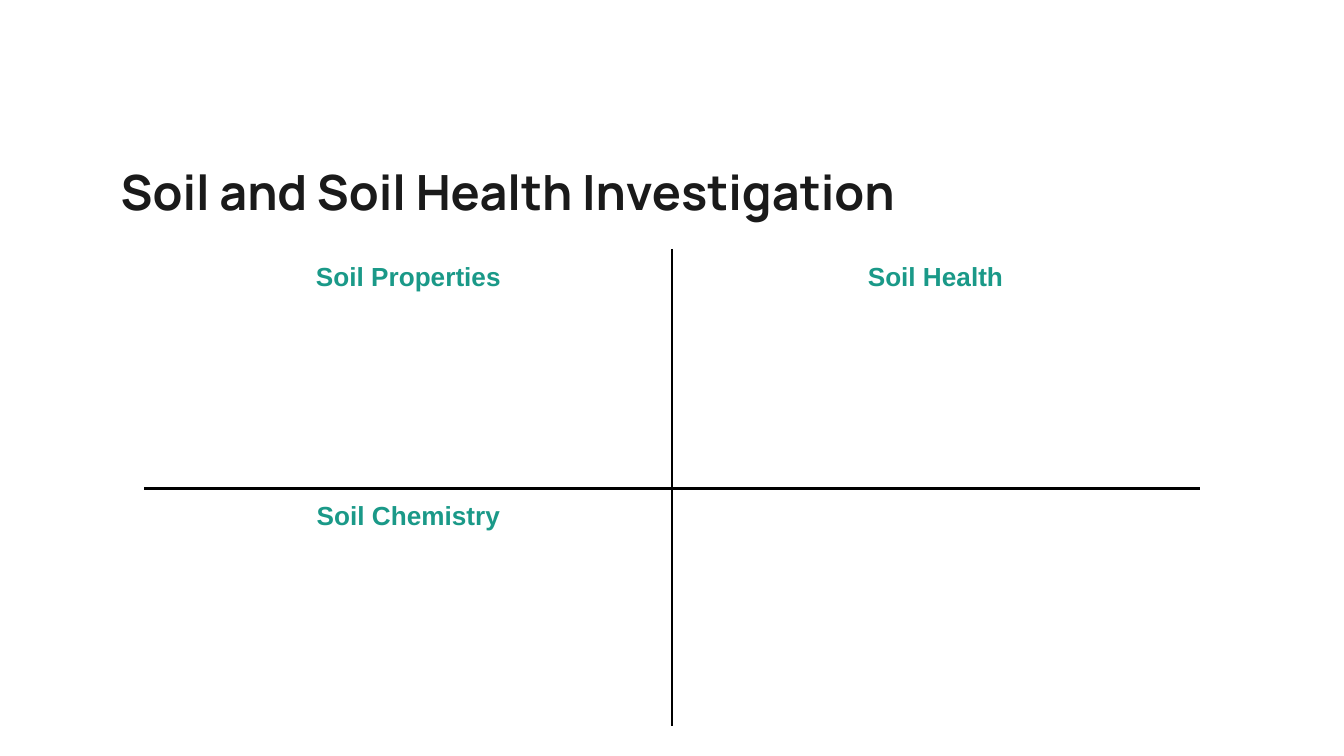
from dataclasses import dataclass

import pptx
import pptx.dml.color
import pptx.enum.text
import pptx.oxml
import pptx.oxml.ns
import pptx.util
from pptx.util import Cm


@dataclass(frozen=True)
class Theme:
    title_color: str = "1A1A1A"
    heading_color: str = "1A9988"
    rule_color: str = "000000"
    title_font: str = "Manrope"
    heading_font: str = "Arial"
    title_size: int = 26
    heading_size: int = 14
    rule_width: float = 1.5


THEME = Theme()
INSET = Cm(0.25)
HEADINGS = [["Soil Properties", "Soil Health"], ["Soil Chemistry", ""]]


def set_font(paragraph, name, size, color):
    paragraph.font.name = name
    paragraph.font.size = pptx.util.Pt(size)
    paragraph.font.bold = True
    paragraph.font.color.rgb = pptx.dml.color.RGBColor.from_string(color)


def add_title(slide, left, top, width, height):
    frame = slide.shapes.add_textbox(left, top, width, height).text_frame
    frame.word_wrap = True
    frame.margin_left = frame.margin_right = INSET
    frame.margin_top = frame.margin_bottom = INSET
    paragraph = frame.paragraphs[0]
    paragraph.text = "Soil and Soil Health Investigation"
    set_font(paragraph, THEME.title_font, THEME.title_size, THEME.title_color)


def add_border(cell, side):
    """Rule one side of a cell: L, R, T or B."""
    width = pptx.util.Pt(THEME.rule_width)
    cell._tc.get_or_add_tcPr().append(pptx.oxml.parse_xml(
        f'<a:ln{side} {pptx.oxml.ns.nsdecls("a")} w="{width}"><a:solidFill>'
        f'<a:srgbClr val="{THEME.rule_color}"/></a:solidFill></a:ln{side}>'))


def add_quadrants(slide, left, top, width, height):
    table = slide.shapes.add_table(2, 2, left, top, width, height).table
    table.first_row = table.horz_banding = False
    for row, headings in enumerate(HEADINGS):
        for column, heading in enumerate(headings):
            cell = table.cell(row, column)
            # Only the sides facing the centre carry a rule
            add_border(cell, "RL"[column])
            add_border(cell, "BT"[row])
            cell.fill.background()
            cell.margin_left = cell.margin_right = INSET
            cell.margin_top = cell.margin_bottom = INSET
            paragraph = cell.text_frame.paragraphs[0]
            paragraph.text = heading
            paragraph.alignment = pptx.enum.text.PP_ALIGN.CENTER
            set_font(paragraph, THEME.heading_font, THEME.heading_size,
                     THEME.heading_color)


def main():
    presentation = pptx.Presentation()
    presentation.slide_width, presentation.slide_height = Cm(25.4), Cm(14.29)
    slide = presentation.slides.add_slide(presentation.slide_layouts[6])
    add_title(slide, Cm(2.03), Cm(2.82), Cm(21.36), Cm(1.5))
    add_quadrants(slide, Cm(2.74), Cm(4.72), Cm(19.92), Cm(9.02))
    presentation.save("out.pptx")


if __name__ == "__main__":
    main()
